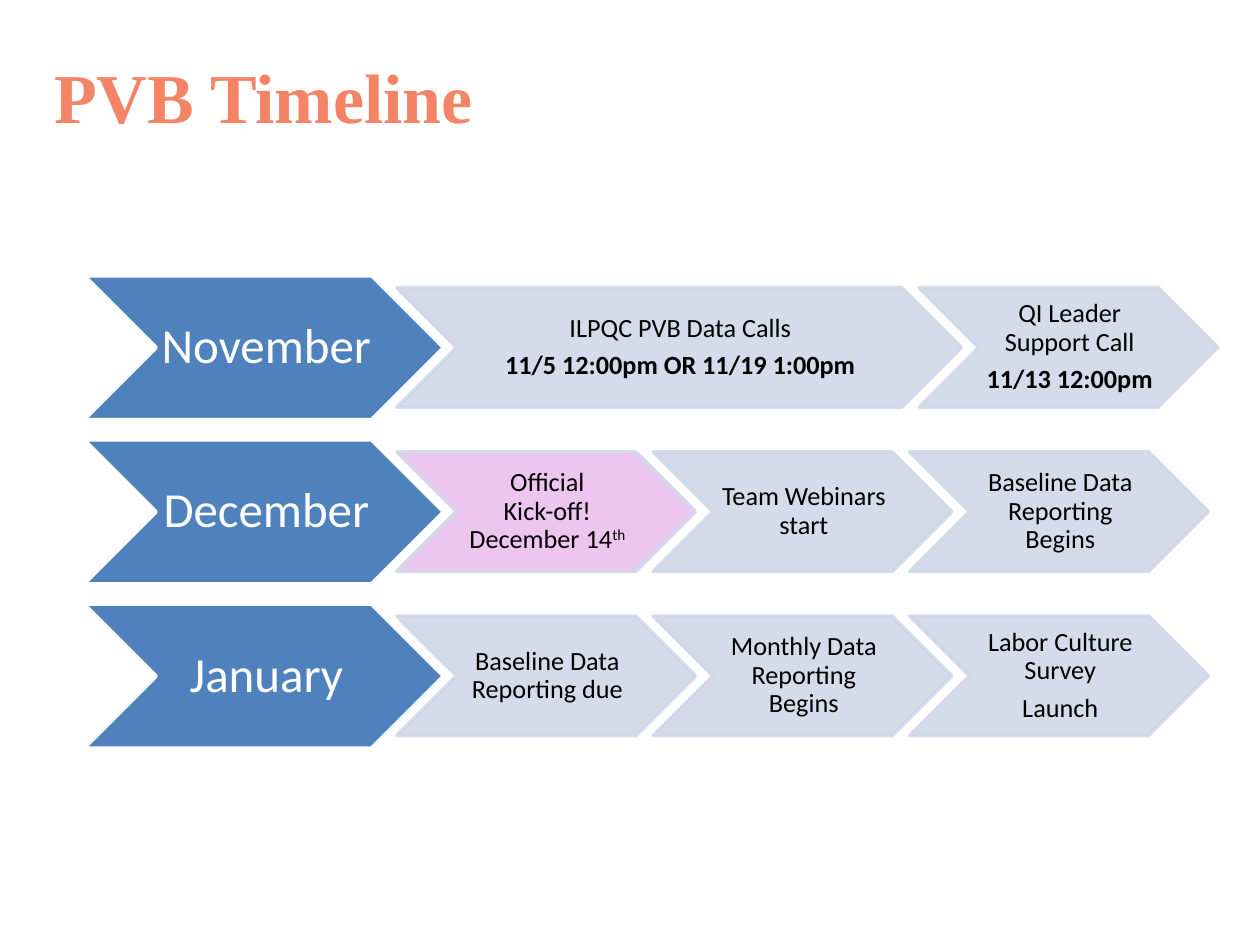
import dataclasses

import pptx
import pptx.dml.color
import pptx.enum.shapes
import pptx.enum.text
import pptx.oxml.ns
import pptx.util
from lxml import etree
from pptx.util import Cm, Pt


@dataclasses.dataclass(frozen=True)
class Theme:
    title_color: str = "F58466"
    month_fill: str = "4F81BD"
    month_text: str = "FFFFFF"
    event_fill: str = "D0D8E8"
    event_text: str = "000000"
    highlight_fill: str = "ECC0EF"
    opacity: int = 90
    title_font: str = "Times New Roman"
    body_font: str = "Calibri"
    title_size: int = 40
    month_size: int = 28
    event_size: int = 15
    line_width: int = 2


@dataclasses.dataclass(frozen=True)
class Run:
    text: str
    bold: bool = False
    superscript: bool = False


@dataclasses.dataclass(frozen=True)
class Event:
    paragraphs: list
    width: float = 6.02
    highlighted: bool = False
    spacing: float = 0.35


class TimelineSlide:
    """Draw a month-by-month timeline in one consistent style."""

    def __init__(self, slide, theme):
        self.slide = slide
        self.theme = theme

    def paint(self, color_format, color, opacity=100):
        color_format.rgb = pptx.dml.color.RGBColor.from_string(color)
        if opacity < 100:
            element = color_format._xFill.find(pptx.oxml.ns.qn("a:srgbClr"))
            alpha = etree.SubElement(element, pptx.oxml.ns.qn("a:alpha"))
            alpha.set("val", str(opacity * 1000))

    def add_run(self, paragraph, content, font_name, size, color):
        run = paragraph.add_run()
        run.text = content.text
        run.font.name = font_name
        run.font.size = Pt(size)
        run.font.bold = content.bold
        self.paint(run.font.color, color)
        if content.superscript:
            run.font._element.set("baseline", "30000")

    def add_title(self, text):
        theme = self.theme
        box = self.slide.shapes.add_textbox(Cm(0.84), Cm(0.2), Cm(20.96), Cm(3.45))
        frame = box.text_frame
        frame.word_wrap = True
        frame.vertical_anchor = pptx.enum.text.MSO_ANCHOR.MIDDLE
        self.add_run(frame.paragraphs[0], Run(text, bold=True), theme.title_font,
                     theme.title_size, theme.title_color)

    def add_chevron(self, left, top, width, height, fill, line, opacity):
        shape = self.slide.shapes.add_shape(
            pptx.enum.shapes.MSO_SHAPE.CHEVRON, Cm(left), Cm(top), Cm(width), Cm(height))
        shape.shadow.inherit = False
        shape.fill.solid()
        self.paint(shape.fill.fore_color, fill, opacity)
        shape.line.width = Pt(self.theme.line_width)
        self.paint(shape.line.color, line, opacity)
        return shape

    def add_label(self, shape, paragraphs, size, color, inset, spacing):
        frame = shape.text_frame
        frame.word_wrap = True
        frame.vertical_anchor = pptx.enum.text.MSO_ANCHOR.MIDDLE
        frame.margin_left, frame.margin_right = Cm(inset), 0
        frame.margin_top = frame.margin_bottom = Cm(inset / 2)
        for index, runs in enumerate(paragraphs):
            paragraph = frame.add_paragraph() if index else frame.paragraphs[0]
            paragraph.alignment = pptx.enum.text.PP_ALIGN.CENTER
            paragraph.line_spacing = 0.9
            paragraph.space_after = Pt(size * spacing)
            for content in runs:
                self.add_run(paragraph, content, self.theme.body_font, size, color)

    def add_month(self, name, top):
        theme = self.theme
        shape = self.add_chevron(1.7, top, 7.24, 2.9, theme.month_fill, theme.month_text, 100)
        self.add_label(shape, [[Run(name)]], theme.month_size, theme.month_text, 0.1, 0.35)

    def add_event(self, event, left, top):
        theme = self.theme
        fill = theme.highlight_fill if event.highlighted else theme.event_fill
        shape = self.add_chevron(left, top, event.width, 2.41, fill,
                                 theme.event_fill, theme.opacity)
        self.add_label(shape, event.paragraphs, theme.event_size, theme.event_text,
                       0.05, event.spacing)

    def add_timeline(self, timeline):
        for row, (month, events) in enumerate(timeline.items()):
            top = 5.56 + 3.31 * row
            self.add_month(month, top)
            left = 8.0
            for event in events:
                self.add_event(event, left, top + 0.24)
                left += event.width - 0.85


TIMELINE = {
    "November": [
        Event([[Run("ILPQC PVB Data Calls")],
               [Run("11/5 12:00pm OR 11/19 1:00pm", bold=True)]], width=11.38),
        Event([[Run("QI Leader Support Call")], [Run("11/13 12:00pm", bold=True)]]),
    ],
    "December": [
        Event([[Run("Official")], [Run("Kick-off!")],
               [Run("December 14"), Run("th", superscript=True)]],
              highlighted=True, spacing=0),
        Event([[Run("Team Webinars start")]]),
        Event([[Run("Baseline Data Reporting Begins")]]),
    ],
    "January": [
        Event([[Run("Baseline Data Reporting due")]]),
        Event([[Run("Monthly Data Reporting Begins")]]),
        Event([[Run("Labor Culture Survey")], [Run("Launch")]]),
    ],
}


def main():
    presentation = pptx.Presentation()
    presentation.slide_width = Cm(25.4)
    presentation.slide_height = Cm(19.05)
    slide = presentation.slides.add_slide(presentation.slide_layouts[6])
    timeline_slide = TimelineSlide(slide, Theme())
    timeline_slide.add_title("PVB Timeline")
    timeline_slide.add_timeline(TIMELINE)
    presentation.save("out.pptx")


if __name__ == "__main__":
    main()
